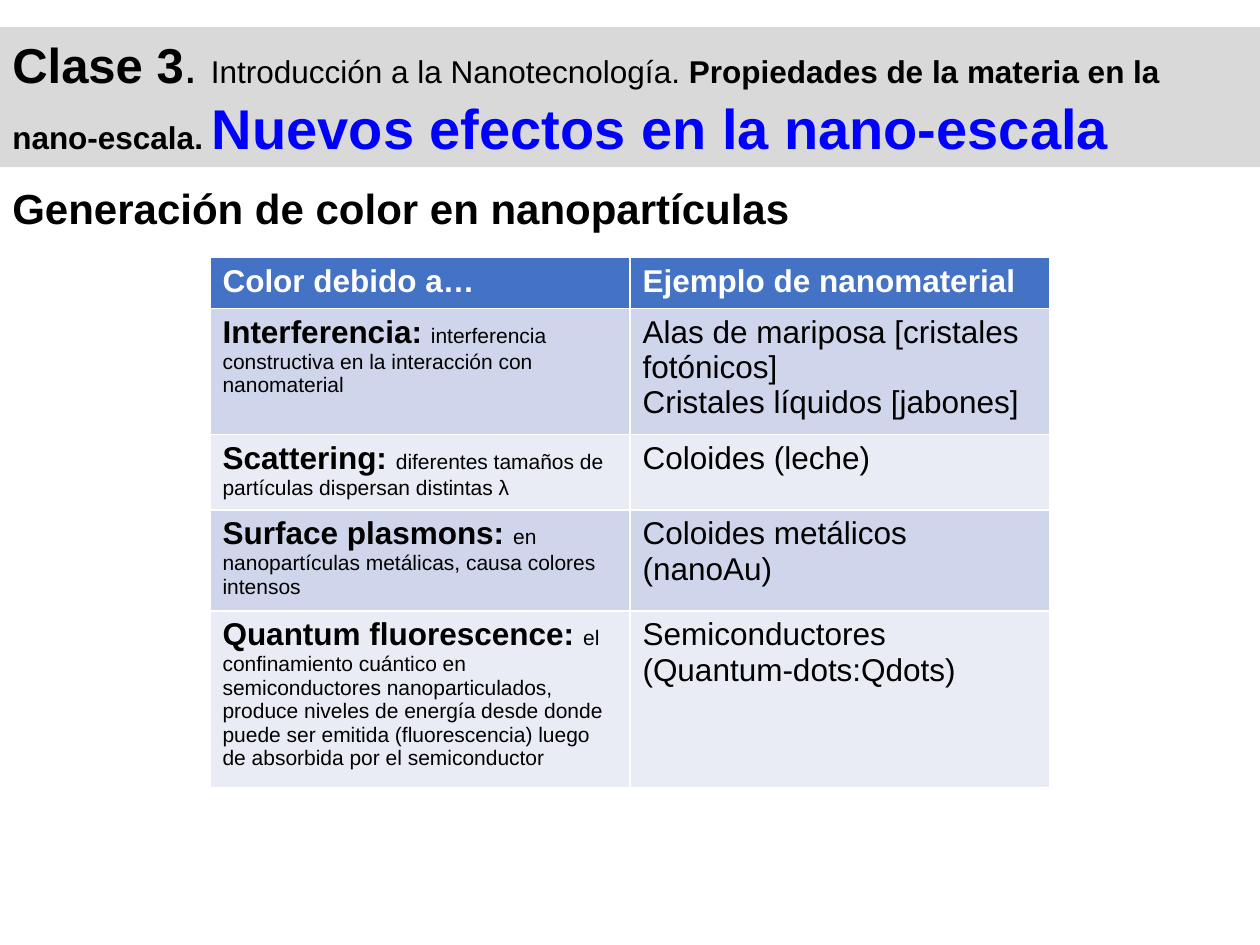
from pptx import Presentation
from pptx.dml.color import RGBColor
from pptx.enum.shapes import MSO_SHAPE
from pptx.enum.text import MSO_ANCHOR, PP_ALIGN
from pptx.util import Pt

RECTANGLE = MSO_SHAPE.RECTANGLE
MIDDLE = MSO_ANCHOR.MIDDLE
LEFT = PP_ALIGN.LEFT

BLACK = RGBColor(0x00, 0x00, 0x00)
WHITE = RGBColor(0xFF, 0xFF, 0xFF)
BLUE = RGBColor(0x00, 0x00, 0xFF)
BANNER_GRAY = RGBColor(0xD9, 0xD9, 0xD9)
HEADER_BLUE = RGBColor(0x44, 0x72, 0xC4)
BAND_COLORS = [RGBColor(0xCF, 0xD5, 0xEA), RGBColor(0xE9, 0xEB, 0xF5)]

SLIDE_WIDTH = 720
ROW_HEIGHT = 29.2

HEADERS = ["Color debido a…", "Ejemplo de nanomaterial"]
EFFECTS = [
    ("Interferencia: ",
     "interferencia constructiva en la interacción con nanomaterial",
     ["Alas de mariposa [cristales fotónicos]", "Cristales líquidos [jabones]"]),
    ("Scattering: ",
     "diferentes tamaños de partículas dispersan distintas λ",
     ["Coloides (leche)"]),
    ("Surface plasmons: ",
     "en nanopartículas metálicas, causa colores intensos",
     ["Coloides metálicos (nanoAu)"]),
    ("Quantum fluorescence: ",
     "el confinamiento cuántico en semiconductores nanoparticulados, produce "
     "niveles de energía desde donde puede ser emitida (fluorescencia) luego "
     "de absorbida por el semiconductor",
     ["Semiconductores (Quantum-dots:Qdots)"]),
]


def add_run(paragraph, text, size, bold=False, color=BLACK):
    run = paragraph.add_run()
    run.text = text
    run.font.name = "Arial"
    run.font.size = Pt(size)
    run.font.bold = bold
    run.font.color.rgb = color


def fill_cell(cell, color):
    cell.fill.solid()
    cell.fill.fore_color.rgb = color


presentation = Presentation()
presentation.slide_width = Pt(SLIDE_WIDTH)
presentation.slide_height = Pt(540)
slide = presentation.slides.add_slide(presentation.slide_layouts[6])

# Section heading
heading = slide.shapes.add_textbox(Pt(0), Pt(100.8), Pt(SLIDE_WIDTH), Pt(36))
heading.text_frame.word_wrap = True
add_run(heading.text_frame.paragraphs[0],
        "Generación de color en nanopartículas", 24, True)

# Title banner
banner = slide.shapes.add_shape(RECTANGLE, Pt(0), Pt(15.6), Pt(SLIDE_WIDTH), Pt(80))
banner.shadow.inherit = False
banner.fill.solid()
banner.fill.fore_color.rgb = BANNER_GRAY
banner.line.fill.background()
banner.text_frame.word_wrap = True
banner.text_frame.vertical_anchor = MIDDLE
title = banner.text_frame.paragraphs[0]
title.alignment = LEFT
add_run(title, "Clase 3", 28, True)
add_run(title, ". ", 28)
add_run(title, "Introducción a la Nanotecnología. ", 18)
add_run(title, "Propiedades de la materia en la nano-escala. ", 18, True)
add_run(title, "Nuevos efectos en la nano-escala", 32, True, BLUE)

# Table of colour effects
table_frame = slide.shapes.add_table(
    len(EFFECTS) + 1, len(HEADERS), Pt(120), Pt(147), Pt(480), Pt(303))
table = table_frame.table
for row in table.rows:
    row.height = Pt(ROW_HEIGHT)
table_frame.height = Pt(303)  # the rows grow with their text up to this height

for column, header in enumerate(HEADERS):
    cell = table.cell(0, column)
    fill_cell(cell, HEADER_BLUE)
    add_run(cell.text_frame.paragraphs[0], header, 18, True, WHITE)

for index, (effect, explanation, examples) in enumerate(EFFECTS):
    effect_cell = table.cell(index + 1, 0)
    example_cell = table.cell(index + 1, 1)
    for cell in (effect_cell, example_cell):
        fill_cell(cell, BAND_COLORS[index % 2])
    paragraph = effect_cell.text_frame.paragraphs[0]
    add_run(paragraph, effect, 18, True)
    add_run(paragraph, explanation, 12)
    for number, example in enumerate(examples):
        text_frame = example_cell.text_frame
        paragraph = text_frame.add_paragraph() if number else text_frame.paragraphs[0]
        add_run(paragraph, example, 18)

presentation.save("out.pptx")
